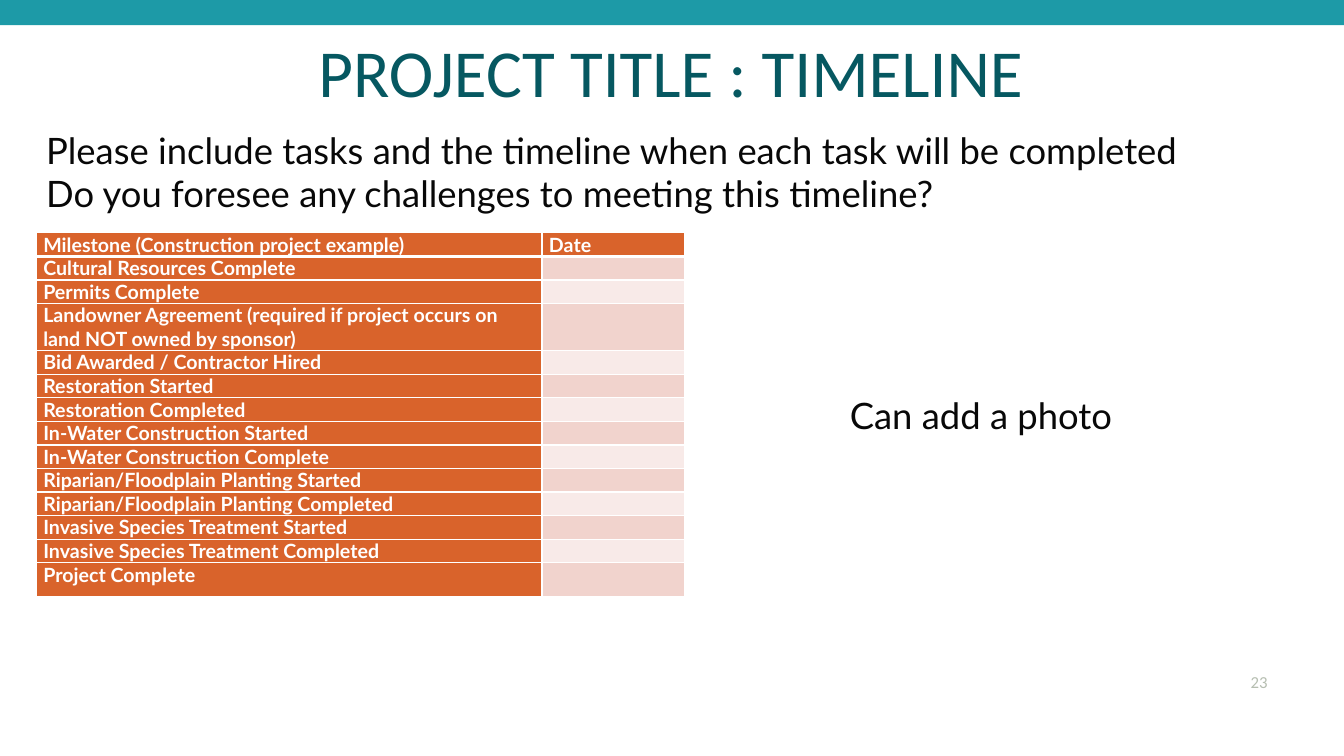
from dataclasses import dataclass

from lxml.etree import SubElement
from pptx import Presentation
from pptx.dml.color import RGBColor
from pptx.enum.shapes import MSO_SHAPE
from pptx.enum.text import MSO_ANCHOR, PP_ALIGN
from pptx.oxml.ns import qn
from pptx.util import Inches, Pt


@dataclass(frozen=True)
class Theme:
    """Colours, fonts and type sizes of the slide."""
    teal: str = "1D9AA7"
    heading: str = "065861"
    ink: str = "080808"
    muted: str = "B6BEB1"
    orange: str = "D9632B"
    white: str = "FFFFFF"
    bands: tuple = ("F1D3CD", "F8EAE8")
    heading_font: str = "Calibri"
    body_font: str = "Lato"
    heading_size: int = 48
    body_size: int = 26
    table_size: int = 14
    number_size: int = 12


THEME = Theme()
WIDTH, HEIGHT = 13.33, 7.5
ROW_HEIGHT, LAST_ROW_HEIGHT = 0.23, 0.34
DATE_SHARE = 0.22
MILESTONES = (
    "Cultural Resources Complete",
    "Permits Complete",
    "Landowner Agreement (required if project occurs on land NOT owned by sponsor)",
    "Bid Awarded / Contractor Hired",
    "Restoration Started",
    "Restoration Completed",
    "In-Water Construction Started",
    "In-Water Construction Complete",
    "Riparian/Floodplain Planting Started",
    "Riparian/Floodplain Planting Completed",
    "Invasive Species Treatment Started",
    "Invasive Species Treatment Completed",
    "Project Complete",
)


def add_span(para, text, font, size, colour, bold=False):
    """Add one styled run to a paragraph."""
    span = para.add_run()
    span.text = text
    span.font.name = font
    span.font.size = Pt(size)
    span.font.bold = bold
    span.font.color.rgb = RGBColor.from_string(colour)


def add_text(page, box, lines, font, size, colour, align=PP_ALIGN.LEFT,
             anchor=MSO_ANCHOR.TOP, sides=(0.1, 0.1)):
    """Place lines of text, one paragraph each, in a box."""
    frame = page.shapes.add_textbox(*map(Inches, box)).text_frame
    frame.word_wrap = True
    frame.vertical_anchor = anchor
    frame.margin_left, frame.margin_right = map(Inches, sides)
    for index, line in enumerate(lines):
        para = frame.paragraphs[0] if index == 0 else frame.add_paragraph()
        para.alignment = align
        add_span(para, line, font, size, colour)


def add_header(page, box):
    """Draw the top band and the centred title below it."""
    left, top, width, height = box
    band_height = height / 4
    band = page.shapes.add_shape(
        MSO_SHAPE.RECTANGLE, *map(Inches, (left, top, width, band_height)))
    band.shadow.inherit = False
    band.fill.solid()
    band.fill.fore_color.rgb = RGBColor.from_string(THEME.teal)
    band.line.fill.background()
    title_box = (left + 0.23, top + band_height, width - 0.48, height - band_height)
    add_text(page, title_box, ["PROJECT TITLE : TIMELINE"], THEME.heading_font,
             THEME.heading_size, THEME.heading, PP_ALIGN.CENTER, sides=(0, 0))


def style_cell(cell, text, colour, top_line, bottom_line):
    """Set the borders, fill, margins and text of a table cell."""
    properties = cell._tc.get_or_add_tcPr()
    for side, points in (("L", 1), ("R", 1), ("T", top_line), ("B", bottom_line)):
        border = SubElement(properties, qn(f"a:ln{side}"), w=str(Pt(points)))
        fill = SubElement(border, qn("a:solidFill"))
        SubElement(fill, qn("a:srgbClr"), val=THEME.white)
    cell.fill.solid()
    cell.fill.fore_color.rgb = RGBColor.from_string(colour)
    cell.margin_left = cell.margin_right = Inches(0.07)
    cell.margin_top = cell.margin_bottom = 0
    para = cell.text_frame.paragraphs[0]
    if text:
        add_span(para, text, THEME.body_font, THEME.table_size, THEME.white, True)
    else:
        ending = SubElement(para._p, qn("a:endParaRPr"), sz=str(THEME.table_size * 100))
        SubElement(ending, qn("a:latin"), typeface=THEME.body_font)


def add_milestones(page, box):
    """Place the milestone table with its empty date column."""
    left, top, width, height = box
    rows = [("Milestone (Construction project example)", "Date")]
    rows += [(milestone, "") for milestone in MILESTONES]
    table = page.shapes.add_table(len(rows), 2, *map(Inches, box)).table
    table.columns[0].width = Inches(width * (1 - DATE_SHARE))
    table.columns[1].width = Inches(width * DATE_SHARE)
    for index, texts in enumerate(rows):
        table.rows[index].height = Inches(ROW_HEIGHT)
        date_colour = THEME.bands[(index - 1) % 2] if index else THEME.orange
        top_line = 3 if index == 1 else 1
        bottom_line = 3 if index == 0 else 1
        for column, colour in enumerate((THEME.orange, date_colour)):
            style_cell(table.cell(index, column), texts[column], colour,
                       top_line, bottom_line)
    table.rows[len(rows) - 1].height = Inches(LAST_ROW_HEIGHT)


def add_timeline_page(deck):
    """Build the timeline slide from its regions."""
    page = deck.slides.add_slide(deck.slide_layouts[6])
    body = (THEME.body_font, THEME.body_size, THEME.ink)
    add_header(page, (0, 0, WIDTH, 1))
    add_text(page, (0.36, 1.22, 11.6, 0.98), [
        "Please include tasks and the timeline when each task will be completed",
        "Do you foresee any challenges to meeting this timeline?",
    ], *body)
    add_text(page, (8.33, 3.85, 2.89, 0.54), ["Can add a photo"], *body)
    add_milestones(page, (0.36, 2.31, 6.43, 3.61))
    add_text(page, (11.78, 6.61, 0.89, 0.3), ["23"], THEME.heading_font,
             THEME.number_size, THEME.muted, PP_ALIGN.RIGHT,
             MSO_ANCHOR.MIDDLE, (0, 0.1))


def main():
    """Create and save the deck."""
    deck = Presentation()
    deck.slide_width, deck.slide_height = Inches(WIDTH), Inches(HEIGHT)
    add_timeline_page(deck)
    deck.save("out.pptx")


if __name__ == "__main__":
    main()
